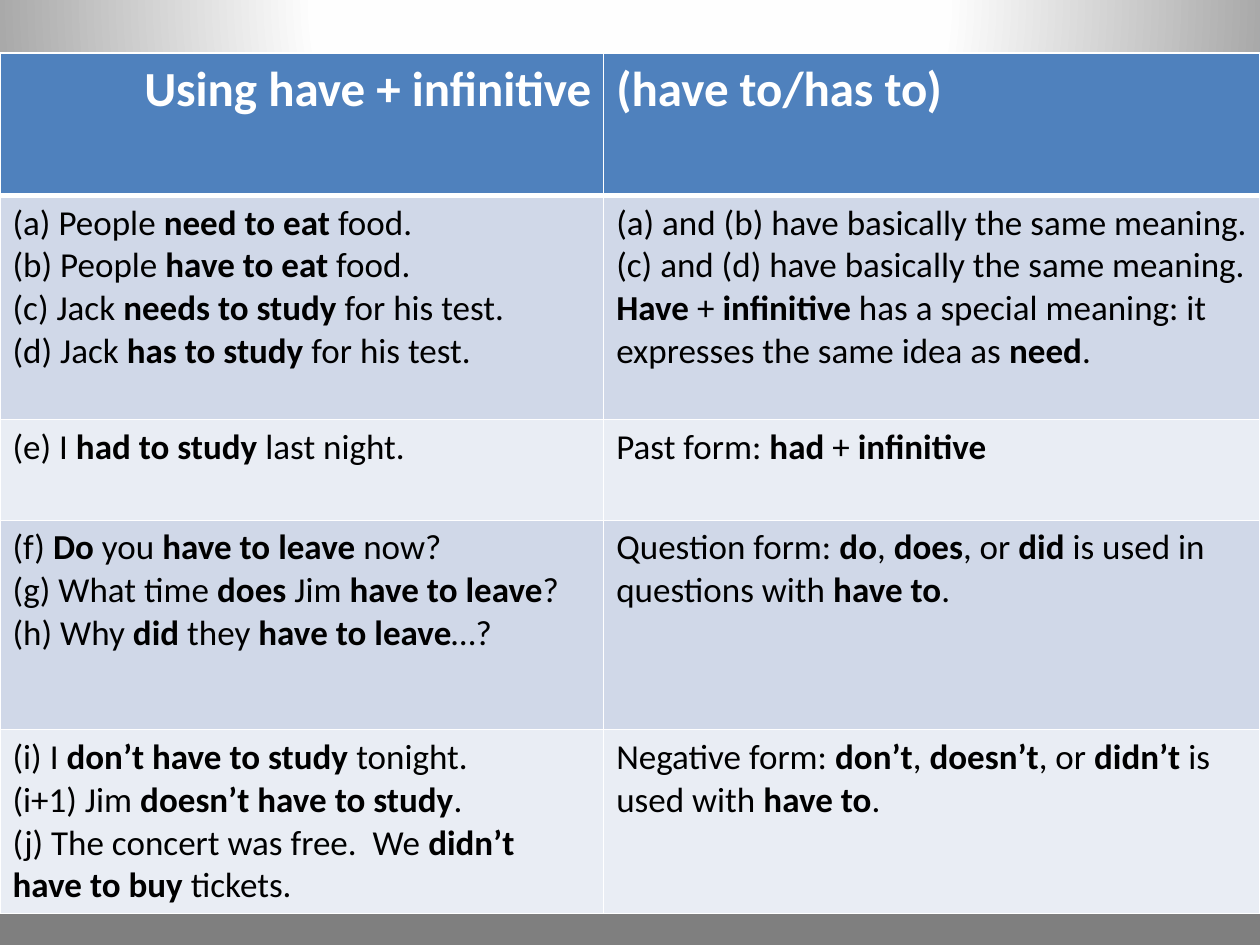
from dataclasses import dataclass

from lxml.etree import SubElement as Sub
from pptx import Presentation
from pptx.dml.color import RGBColor as Rgb
from pptx.enum.text import PP_ALIGN as Align
from pptx.oxml import parse_xml
from pptx.oxml.ns import nsdecls, qn
from pptx.util import Cm, Pt

HUES = {
    "head": "4F81BD", "odd": "D0D8E8", "even": "E9EDF4",
    "white": "FFFFFF", "black": "000000",
    "near": "FEFEFE", "grey": "7F7F7F",
}
FONT = "Calibri"
COLS = (12.17, 13.23)


@dataclass
class Row:
    """A table row; each cell is a list of lines, with *bold* words starred."""
    high: float
    left: list[str]
    right: list[str]


HEAD = Row(2.87, ["*Using have + infinitive*"], ["*(have to/has to)*"])
BODY = [
    Row(4.52,
        ["(a) People *need to eat *food.",
         "(b) People *have to eat *food.",
         "(c) Jack *needs to study *for his test.",
         "(d) Jack *has to study *for his test."],
        ["(a) and (b) have basically the same meaning.",
         "(c) and (d) have basically the same meaning. *Have* + *infinitive* "
         "has a special meaning: it expresses the same idea as *need*."]),
    Row(2.03,
        ["(e) I *had to study *last night."],
        ["Past form: *had* + *infinitive*"]),
    Row(4.22,
        ["(f) *Do* you *have to leave *now?",
         "(g) What time *does *Jim* have to leave*?",
         "(h) Why *did *they* have to leave*…?"],
        ["Question form: *do*, *does*, or *did* is used in questions "
         "with *have to*."]),
    Row(3.71,
        ["(i) I *don’t have to study *tonight.",
         "(i+1) Jim *doesn’t have to study*.",
         "(j) The concert was free.  We *didn’t have to buy *tickets."],
        ["Negative form: *don’t*, *doesn’t*, or *didn’t* is used "
         "with *have to*."]),
]


def paint_back(slide) -> None:
    """Fill the background with a round gradient centred above the slide."""
    stops = "".join(
        f'<a:gs pos="{pos}000"><a:srgbClr val="{HUES[hue]}"/></a:gs>'
        for pos, hue in ((0, "white"), (40, "near"), (100, "grey")))
    slide.element.cSld.insert(0, parse_xml(
        f'<p:bg {nsdecls("p", "a")}><p:bgPr><a:gradFill rotWithShape="1">'
        f'<a:gsLst>{stops}</a:gsLst><a:path path="circle">'
        '<a:fillToRect l="50000" t="-80000" r="50000" b="180000"/>'
        '</a:path></a:gradFill><a:effectLst/></p:bgPr></p:bg>'))


def add_edges(cell, top: int, base: int) -> None:
    """Draw white cell borders, with the top and bottom widths in points."""
    props = cell._tc.get_or_add_tcPr()
    for side, wide in (("L", 1), ("R", 1), ("T", top), ("B", base)):
        line = Sub(props, qn(f"a:ln{side}"), w=str(Pt(wide)))
        fill = Sub(line, qn("a:solidFill"))
        Sub(fill, qn("a:srgbClr"), val=HUES["white"])


def add_text(cell, lines: list[str], size: int, ink: str, align: Align) -> None:
    """Write one paragraph a line, switching bold at each star."""
    frame = cell.text_frame
    for i, line in enumerate(lines):
        para = frame.add_paragraph() if i else frame.paragraphs[0]
        para.alignment = align
        for j, part in enumerate(line.split("*")):
            if not part:
                continue
            run = para.add_run()
            run.text = part
            font = run.font
            font.name, font.size, font.bold = FONT, Pt(size), j % 2 == 1
            font.color.rgb = Rgb.from_string(HUES[ink])


def draw_row(table, i: int, row: Row) -> None:
    """Fill and write both cells of row i; row 0 is the heading."""
    table.rows[i].height = Cm(row.high)
    hue = "head" if i == 0 else "odd" if i % 2 else "even"
    size, ink = (28, "white") if i == 0 else (20, "black")
    for j, lines in enumerate((row.left, row.right)):
        cell = table.cell(i, j)
        add_edges(cell, 3 if i == 1 else 1, 3 if i == 0 else 1)
        cell.fill.solid()
        cell.fill.fore_color.rgb = Rgb.from_string(HUES[hue])
        align = Align.RIGHT if i == 0 and j == 0 else Align.LEFT
        add_text(cell, lines, size, ink, align)


def main() -> None:
    deck = Presentation()
    deck.slide_width, deck.slide_height = Cm(25.4), Cm(19.05)
    slide = deck.slides.add_slide(deck.slide_layouts[6])
    paint_back(slide)

    # Grammar table
    rows = [HEAD, *BODY]
    table = slide.shapes.add_table(
        len(rows), len(COLS), Cm(0), Cm(1.07),
        Cm(sum(COLS)), Cm(sum(row.high for row in rows))).table
    for col, wide in zip(table.columns, COLS):
        col.width = Cm(wide)
    for i, row in enumerate(rows):
        draw_row(table, i, row)

    deck.save("out.pptx")


if __name__ == "__main__":
    main()
